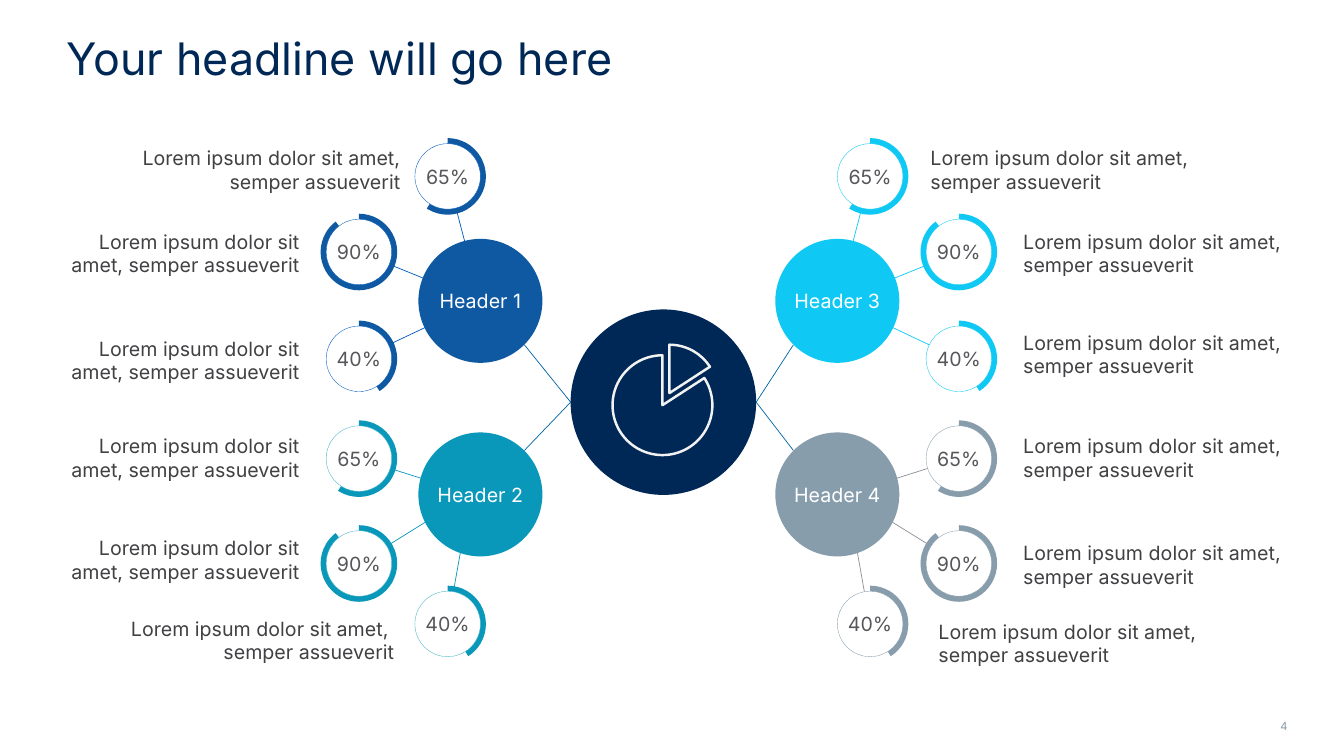
from lxml import etree
from pptx import Presentation
from pptx.dml.color import RGBColor
from pptx.enum.shapes import MSO_CONNECTOR, MSO_SHAPE
from pptx.enum.text import MSO_ANCHOR, MSO_AUTO_SIZE, PP_ALIGN as AL
from pptx.oxml.ns import qn
from pptx.util import Inches, Pt


def rgb(value):
    return RGBColor.from_string(value)


class Deck:
    """Hold the slide and its style, and draw each kind of element."""

    font = "Inter"
    navy, grey, white, icon = "002856", "57565A", "FFFFFF", "F2F2F2"

    def __init__(self):
        self.prs = Presentation()
        self.prs.slide_width, self.prs.slide_height = Inches(13.33), Inches(7.5)
        self.s = self.prs.slides.add_slide(self.prs.slide_layouts[6])

    def set_text(self, tf, lines, size, color, align):
        tf.text = "\n".join(lines)
        for p in tf.paragraphs:
            p.alignment = align
            p.font.name, p.font.size = self.font, Pt(size)
            p.font.color.rgb = rgb(color)

    def text(self, x, y, w, h, lines, size=14, color="414043", align=AL.LEFT, grow=True):
        tf = self.s.shapes.add_textbox(*map(Inches, (x, y, w, h))).text_frame
        tf.word_wrap = True
        if grow:
            tf.auto_size = MSO_AUTO_SIZE.SHAPE_TO_FIT_TEXT
        self.set_text(tf, lines, size, color, align)

    def round(self, kind, cx, cy, d, fill=None, line=None, width=0.25):
        sp = self.s.shapes.add_shape(
            kind, *map(Inches, (cx - d / 2, cy - d / 2, d, d)))
        sp.shadow.inherit = False
        if fill:
            sp.fill.solid()
            sp.fill.fore_color.rgb = rgb(fill)
        else:
            sp.fill.background()
        if line:
            sp.line.color.rgb, sp.line.width = rgb(line), Pt(width)
        else:
            sp.line.fill.background()
        return sp

    def circle(self, cx, cy, d, fill, label="", color=white, line=None):
        sp = self.round(MSO_SHAPE.OVAL, cx, cy, d, fill, line)
        if label:
            tf = sp.text_frame
            tf.word_wrap, tf.vertical_anchor = False, MSO_ANCHOR.MIDDLE
            tf.margin_left = tf.margin_right = Inches(0.13)
            tf.margin_top = tf.margin_bottom = Inches(0.07)
            self.set_text(tf, [label], 14, color, AL.CENTER)

    def pie(self, cx, cy, d, start, end, **style):
        sp = self.round(MSO_SHAPE.PIE, cx, cy, d, **style)
        sp.adjustments[0], sp.adjustments[1] = start, end
        return sp

    def gauge(self, cx, cy, label, fill, line):
        self.pie(cx, cy, 0.76, 0, SWEEPS[label], fill=fill).rotation = 270
        self.circle(cx, cy, 0.65, self.white, label, self.grey, line)

    def line(self, x1, y1, x2, y2, color):
        c = self.s.shapes.add_connector(
            MSO_CONNECTOR.STRAIGHT, *map(Inches, (x1, y1, x2, y2)))
        c.line.color.rgb, c.line.width = rgb(color), Pt(0.5)
        etree.SubElement(c._element.spPr, qn("a:effectLst"))

    def branch(self, side, label, hub_y, spoke, link_y, colors, gauges):
        fill, spoke_color, ring = colors
        self.line(AXIS + side * 1.335, link_y, CORE_X + side * 0.92, 3.99, "0065A4")
        for dx, y, _ in gauges:
            self.line(AXIS + side * spoke[0], spoke[1], AXIS + side * dx, y, spoke_color)
        for dx, y, value in gauges:
            self.gauge(AXIS + side * dx, y, value, fill, ring)
        self.circle(AXIS + side * 1.77, hub_y, 1.23, fill, label)


AXIS, CORE_X = 6.535, 6.58
NEAR, FAR = 2.095, 2.975
SWEEPS = {"40%": 88.4, "65%": 127.79, "90%": 193.55}
UPPER = (2.985, (1.77, 2.99), 3.42)
LOWER = (4.905, (1.865, 4.9), 4.47)
UPPER_GAUGES = [(NEAR, 1.75, "65%"), (FAR, 2.5, "90%"), (FAR, 3.56, "40%")]
LOWER_GAUGES = [(FAR, 4.55, "65%"), (FAR, 5.59, "90%"), (NEAR, 6.19, "40%")]
BRANCHES = [
    (-1, "Header 1", *UPPER, ("0E59A1", "0059C0", "0059C0"), UPPER_GAUGES),
    (-1, "Header 2", *LOWER, ("0998BA", "0998BA", "46B3C7"), LOWER_GAUGES),
    (1, "Header 3", *UPPER, ("0FC9F4", "0FC9F4", "0FC9F4"), UPPER_GAUGES),
    (1, "Header 4", *LOWER, ("889DAC", "908F95", "889DAC"), LOWER_GAUGES),
]
FIRST, SECOND = "Lorem ipsum dolor sit amet,", "semper assueverit"
LEFT_NEAR = [(1.29, 1.4, 2.78), (1.16, 6.07, 2.85)]
LEFT_FAR = [2.23, 3.29, 4.26, 5.27]
RIGHT = [(9.13, 1.4, 3.12), *((10.05, y, 2.84) for y in (2.23, 3.23, 4.26, 5.32)),
         (9.21, 6.1, 2.84)]


def main():
    d = Deck()
    d.text(12.31, 7.09, 0.56, 0.24, ["4"], 8, "889DAC", AL.RIGHT)
    d.text(0.56, 0.26, 12.2, 0.59, ["Your headline will go here"], 32, d.navy, grow=False)
    for branch in BRANCHES:
        d.branch(*branch)
    d.circle(CORE_X, 3.99, 1.84, d.navy)
    outline = {"line": d.icon, "width": 1.75}
    d.pie(6.57, 4.02, 0.99, 196.2, 162, **outline)
    d.pie(6.64, 3.9, 0.96, 162, 196.2, **outline)
    for x, y, w in LEFT_NEAR:
        d.text(x, y, w, 0.57, [FIRST + " ", SECOND], align=AL.RIGHT)
    for y in LEFT_FAR:
        d.text(0.44, y, 2.63, 0.57, [f"{FIRST} {SECOND}"], align=AL.RIGHT)
    for x, y, w in RIGHT:
        d.text(x, y, w, 0.57, [FIRST, SECOND])
    d.prs.save("out.pptx")


if __name__ == "__main__":
    main()
